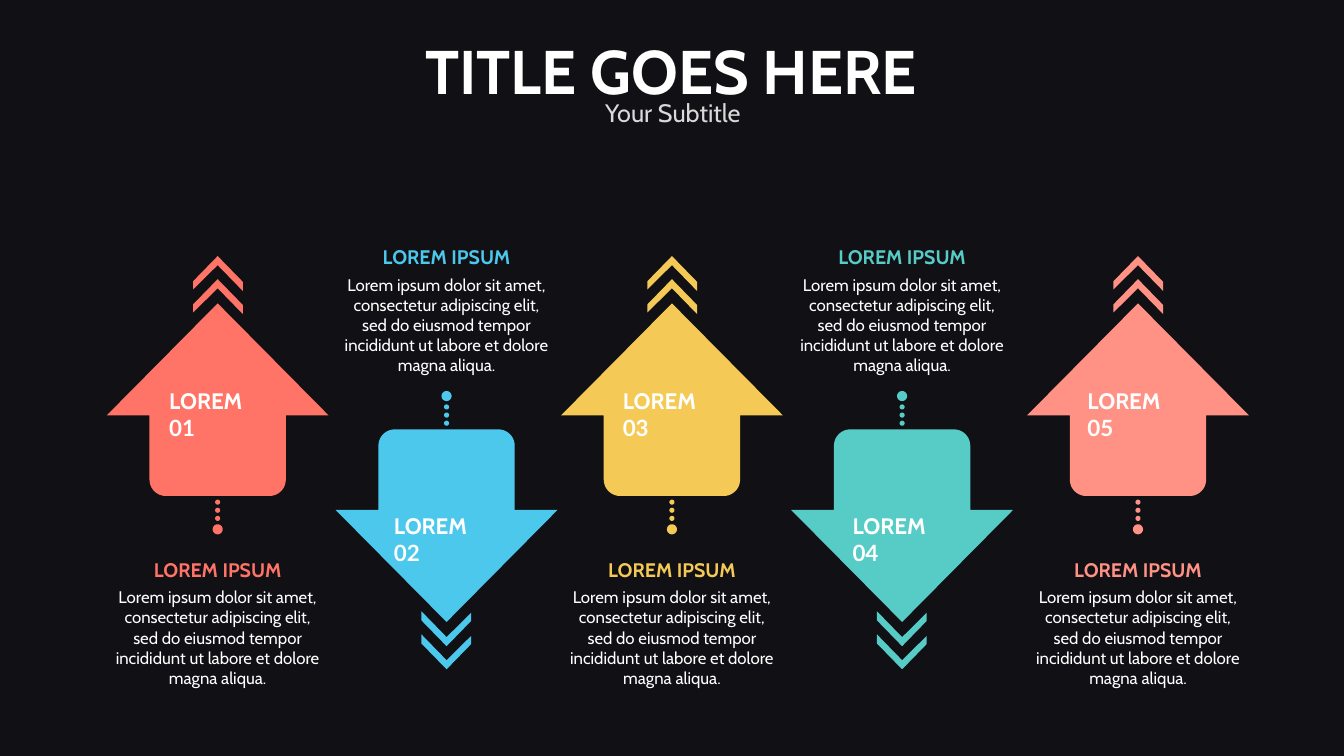
from math import cos, pi, sin

from pptx import Presentation
from pptx.dml.color import RGBColor
from pptx.enum.text import MSO_ANCHOR as Anchor, PP_ALIGN as Align
from pptx.util import Pt

COLORS = {
    "background": "101015",
    "white": "FFFFFF",
    "subtitle": "D9D9D9",
    "coral": "FF7467",
    "blue": "4CC8EC",
    "yellow": "F4C956",
    "teal": "57CCC6",
    "salmon": "FF9285",
}
HEADING = "LOREM IPSUM"
BODY = ("Lorem ipsum dolor sit amet, consectetur adipiscing elit, "
        "sed do eiusmod tempor incididunt ut labore et dolore magna aliqua.")
# Colour, centre of the arrow, left edge of its label
STEPS = [
    ("coral", 155.5, 113.8),
    ("blue", 319, 274.3),
    ("yellow", 480, 437.8),
    ("teal", 644.4, 601.9),
    ("salmon", 812.9, 769.7),
]
UP = {"sign": 1, "tip": 182.9, "label": 272.9, "caption": 394.6}
DOWN = {"sign": -1, "tip": 478.1, "label": 362.2, "caption": 171.4}
CAPTION_WIDTH, CAPTION_HEIGHT = 167, 101.5
CHEVRON = [(0, 0), (18, 18.5), (18, 25), (0, 6.5), (-17.5, 23.8), (-17.5, 18)]
CHEVRON_STEP = 16.5
HEAD_TOP, HEAD_BOTTOM, HEAD_HALF = 33.8, 113.8, 79.2
BODY_BOTTOM, BODY_HALF, CORNER = 171.4, 48.7, 11.7
DOTS = [(175.8, 1.8), (181.6, 1.8), (187.4, 1.8), (195.2, 3.6)]


def arc(x, y, radius, start, end, steps):
    """Points on a circle around (x, y), angles in radians."""
    angles = [start + (end - start) * i / steps for i in range(steps + 1)]
    return [(x + radius * cos(a), y + radius * sin(a)) for a in angles]


def arrow_outlines():
    """Closed outlines of an upward arrow, measured from its topmost point."""
    corner_x, corner_y = BODY_HALF - CORNER, BODY_BOTTOM - CORNER
    block = [(0, HEAD_TOP), (HEAD_HALF, HEAD_BOTTOM), (BODY_HALF, HEAD_BOTTOM)]
    block += arc(corner_x, corner_y, CORNER, 0, pi / 2, 10)
    block += arc(-corner_x, corner_y, CORNER, pi / 2, pi, 10)
    block += [(-BODY_HALF, HEAD_BOTTOM), (-HEAD_HALF, HEAD_BOTTOM)]
    chevrons = [[(x, y + i * CHEVRON_STEP) for x, y in CHEVRON] for i in range(2)]
    dots = [arc(0, y, radius, 0, 2 * pi, 24)[:-1] for y, radius in DOTS]
    return [*chevrons, block, *dots]


class SlideBuilder:
    def __init__(self, slide, font="Cabin", number_font="Lato"):
        self.slide = slide
        self.font = font
        self.number_font = number_font

    def color(self, name):
        return RGBColor.from_string(COLORS[name])

    def background(self, color):
        fill = self.slide.background.fill
        fill.solid()
        fill.fore_color.rgb = self.color(color)

    def style(self, paragraph, size, color, bold=False, align=Align.CENTER):
        paragraph.alignment = align
        font = paragraph.font
        font.name, font.size, font.bold = self.font, Pt(size), bold
        font.color.rgb = self.color(color)

    def placeholder(self, index, text, box, size, color, bold=False):
        shape = self.slide.placeholders[index]
        shape.left, shape.top, shape.width, shape.height = map(Pt, box)
        frame = shape.text_frame
        frame.text = text
        frame.vertical_anchor = Anchor.TOP
        paragraph = frame.paragraphs[0]
        paragraph.space_before = Pt(0)
        self.style(paragraph, size, color, bold)

    def text_frame(self, *box):
        frame = self.slide.shapes.add_textbox(*map(Pt, box)).text_frame
        frame.word_wrap = True
        return frame

    def caption(self, center, top, color):
        frame = self.text_frame(center - CAPTION_WIDTH / 2, top,
                                CAPTION_WIDTH, CAPTION_HEIGHT)
        heading, body = frame.paragraphs[0], frame.add_paragraph()
        heading.text, body.text = HEADING, BODY
        body.space_before = Pt(4.3)
        self.style(heading, 14, color, bold=True)
        self.style(body, 12, "white")

    def label(self, left, top, number):
        paragraph = self.text_frame(left, top, 86.4, 26.6).paragraphs[0]
        self.style(paragraph, 16, "white", bold=True, align=Align.LEFT)
        paragraph.add_run().text = "LOREM "
        run = paragraph.add_run()
        run.text = f"{number:02}"
        run.font.name = self.number_font

    def arrow(self, center, tip, sign, color):
        """Draw the arrow with chevrons and dots; sign -1 points it down."""
        builder = None
        for outline in arrow_outlines():
            first, *rest = [(Pt(center + sign * x), Pt(tip + sign * y))
                            for x, y in outline]
            if builder is None:
                builder = self.slide.shapes.build_freeform(*first)
            else:
                builder.move_to(*first)
            builder.add_line_segments(rest, close=True)
        shape = builder.convert_to_shape()
        shape.shadow.inherit = False
        shape.fill.solid()
        shape.fill.fore_color.rgb = self.color(color)
        shape.line.fill.background()


def main():
    presentation = Presentation()
    presentation.slide_width, presentation.slide_height = Pt(960), Pt(540)
    slide = presentation.slides.add_slide(presentation.slide_layouts[0])
    builder = SlideBuilder(slide)
    builder.background("background")
    builder.placeholder(0, "TITLE GOES HERE", (262.8, 20.2, 433.4, 60.5),
                        44, "white", bold=True)
    builder.placeholder(1, "Your Subtitle", (317.5, 66.2, 326.2, 28.8),
                        18, "subtitle")
    for number, (color, center, label_left) in enumerate(STEPS, 1):
        way = UP if number % 2 else DOWN
        builder.caption(center, way["caption"], color)
        builder.arrow(center, way["tip"], way["sign"], color)
        builder.label(label_left, way["label"], number)
    presentation.save("out.pptx")


if __name__ == "__main__":
    main()
